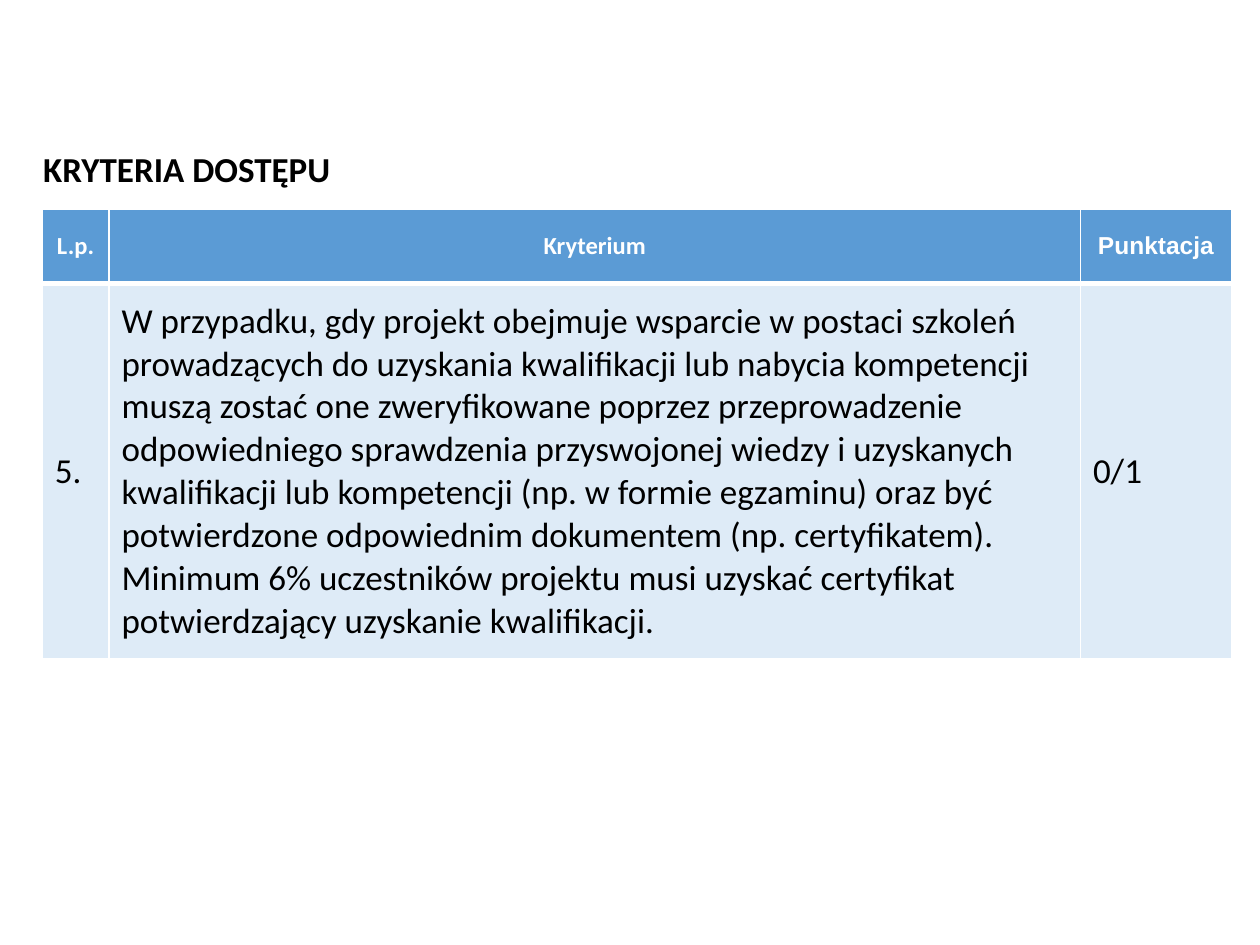
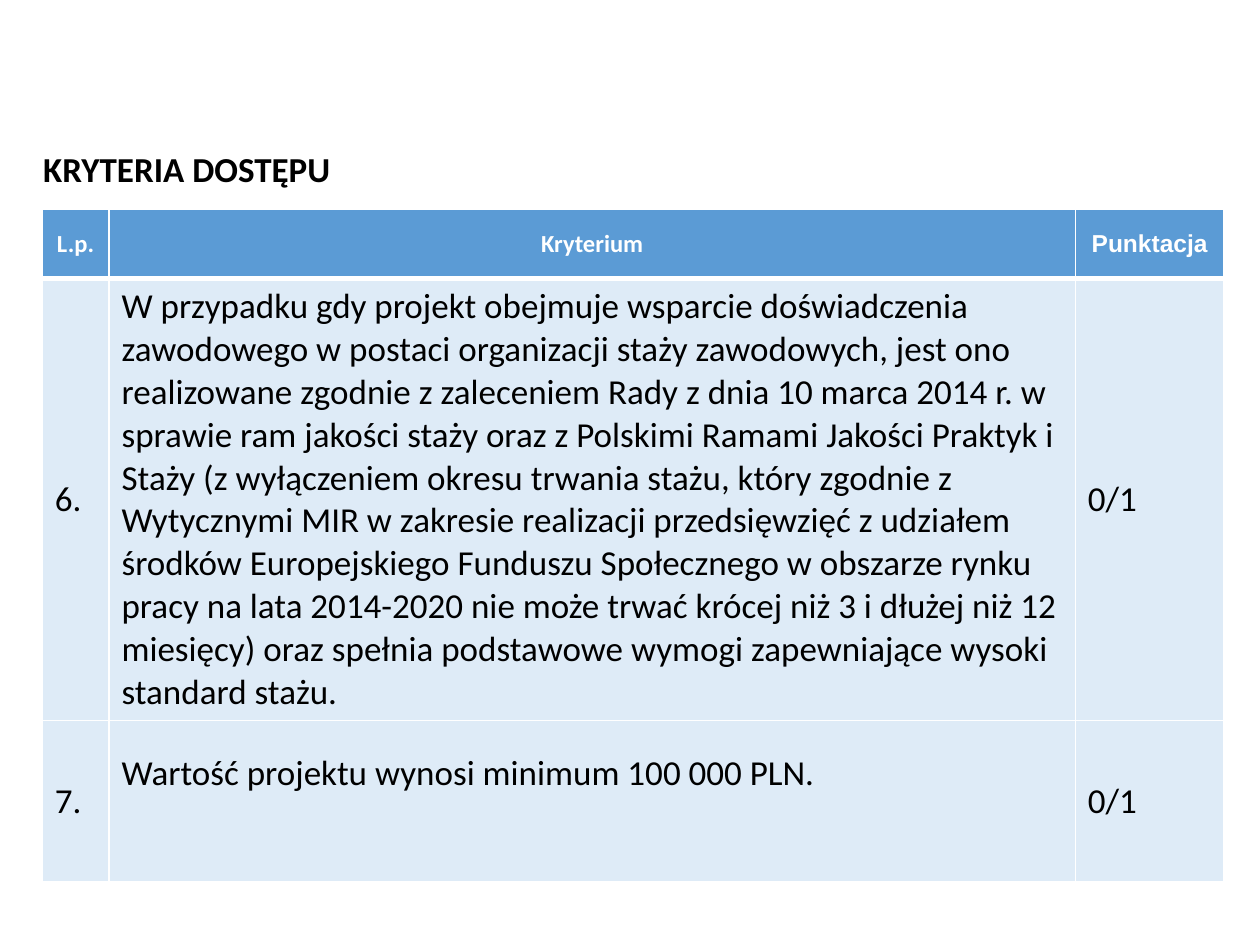
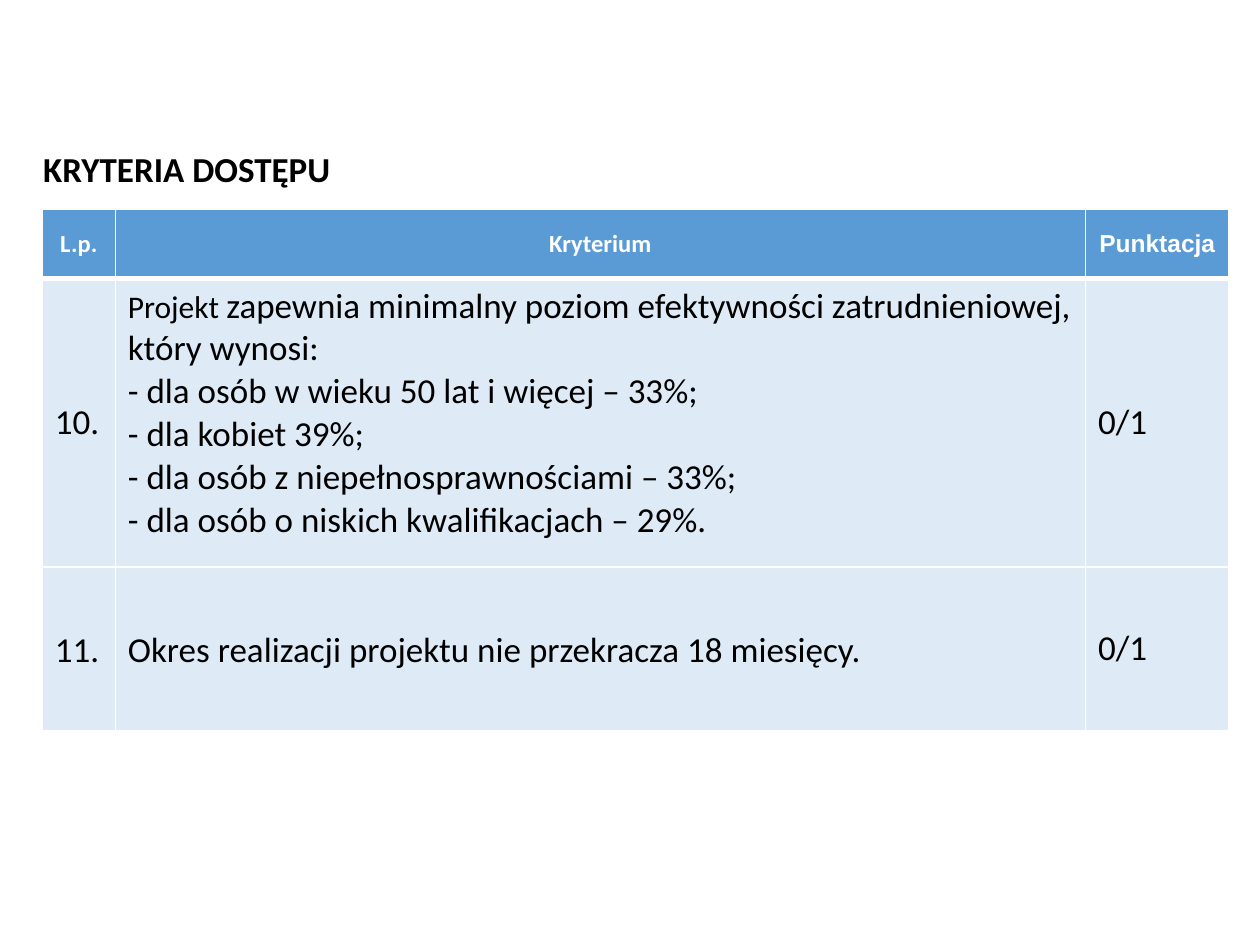
from dataclasses import dataclass

from lxml import etree
from pptx import Presentation
from pptx import util as u
from pptx.dml.color import RGBColor
from pptx.enum import text
from pptx.oxml.ns import qn

# Shared look
HUES = {"head": "5B9BD5", "body": "DEEBF7", "white": "FFFFFF", "ink": "000000"}
FONT = "Calibri"
TITLE = "KRYTERIA DOSTĘPU"
HEADS = [("L.p.", FONT), ("Kryterium", FONT), ("Punktacja", "Arial")]
SCORE = "0/1"

# Grid: 100 columns by 75 rows
COLS, ROWS = 100, 75
WIDE, HIGH = u.Inches(10), u.Inches(7.5)
LEFT, TOP = 3.35, 16.6


def gx(n: float) -> int:
    return round(WIDE * n / COLS)


def gy(n: float) -> int:
    return round(HIGH * n / ROWS)


@dataclass
class Rule:
    """One criterion: its number, its lines and the height of its row."""
    num: str
    lines: list[str]
    high: float
    lead: str = ""            # smaller opening words of the first line
    top: bool = False         # text at the top of the cell
    loose: tuple[int, ...] = ()   # columns with looser lines
    foot: float = 0.5         # bottom margin of the criterion cell


@dataclass
class Page:
    """One slide: column widths, header height, criteria."""
    cols: list[float]
    head: float
    rules: list[Rule]


PAGES = [
    Page([5.3, 77.1, 12], 5.9, [
        Rule("5.", [
            "W przypadku, gdy projekt obejmuje wsparcie w postaci szkoleń "
            "prowadzących do uzyskania kwalifikacji lub nabycia kompetencji "
            "muszą zostać one zweryfikowane poprzez przeprowadzenie "
            "odpowiedniego sprawdzenia przyswojonej wiedzy i uzyskanych "
            "kwalifikacji lub kompetencji (np. w formie egzaminu) oraz być "
            "potwierdzone odpowiednim dokumentem (np. certyfikatem). "
            "Minimum 6% uczestników projektu musi uzyskać certyfikat "
            "potwierdzający uzyskanie kwalifikacji."], 29.8),
    ]),
    Page([5.3, 76.7, 11.8], 5.5, [
        Rule("6.", [
            "W przypadku gdy projekt obejmuje wsparcie doświadczenia "
            "zawodowego w postaci organizacji staży zawodowych, jest ono "
            "realizowane zgodnie z zaleceniem Rady z dnia 10 marca 2014 r. w "
            "sprawie ram jakości staży oraz z Polskimi Ramami Jakości Praktyk "
            "i Staży (z wyłączeniem okresu trwania stażu, który zgodnie z "
            "Wytycznymi MIR w zakresie realizacji przedsięwzięć z udziałem "
            "środków Europejskiego Funduszu Społecznego w obszarze rynku "
            "pracy na lata 2014-2020 nie może trwać krócej niż 3 i dłużej niż "
            "12 miesięcy) oraz spełnia podstawowe wymogi zapewniające wysoki "
            "standard stażu."], 35.1),
        Rule("7.", ["Wartość projektu wynosi minimum 100 000 PLN."], 12.8,
             loose=(1,), foot=5.2),
    ]),
    Page([5.8, 77, 11.4], 5.5, [
        Rule("10.", [
            "zapewnia minimalny poziom efektywności zatrudnieniowej, "
            "który wynosi:",
            "- dla osób w wieku 50 lat i więcej – 33%;",
            "- dla kobiet 39%;",
            "- dla osób z niepełnosprawnościami – 33%;",
            "- dla osób o niskich kwalifikacjach – 29%."],
            22.9, lead="Projekt ", top=True),
        Rule("11.", ["Okres realizacji projektu nie przekracza 18 miesięcy."],
             13, loose=(0, 1)),
    ]),
]


def style(para, size: int, hue: str, bold: bool, face: str = FONT) -> None:
    font = para.font
    font.size, font.bold, font.name = u.Pt(size), bold, face
    font.color.rgb = RGBColor.from_string(HUES[hue])


def paint(cell, hue: str, edges: dict[str, float]) -> None:
    """Draw white cell borders, then fill the cell."""
    props = cell._tc.get_or_add_tcPr()
    for side, width in edges.items():
        line = etree.SubElement(props, qn(f"a:ln{side}"), w=str(u.Pt(width)))
        fill = etree.SubElement(line, qn("a:solidFill"))
        etree.SubElement(fill, qn("a:srgbClr"), val=HUES["white"])
    cell.fill.solid()
    cell.fill.fore_color.rgb = RGBColor.from_string(HUES[hue])
    cell.vertical_anchor = text.MSO_ANCHOR.MIDDLE


def add_head(grid) -> None:
    for cell, (word, face) in zip(grid.rows[0].cells, HEADS):
        paint(cell, "head", {"L": 1, "R": 1, "T": 1, "B": 3})
        para = cell.text_frame.paragraphs[0]
        para.text = word
        para.alignment = text.PP_ALIGN.CENTER
        style(para, 14, "white", True, face)


def add_rule(row, rule: Rule) -> None:
    row.height = gy(rule.high)
    for col, lines in enumerate([[rule.num], rule.lines, [SCORE]]):
        cell = row.cells[col]
        paint(cell, "body", {"L": 1, "R": 1, "B": 1})
        frame = cell.text_frame
        frame.text = "\n".join(lines)
        for para in frame.paragraphs:
            style(para, 20, "ink", False)
            if col in rule.loose:
                para.line_spacing, para.space_after = 1.07, u.Pt(8)
    # Details of the criterion cell
    cell = row.cells[1]
    cell.margin_bottom = gy(rule.foot)
    if rule.top:
        cell.vertical_anchor = text.MSO_ANCHOR.TOP
    if rule.lead:
        para = cell.text_frame.paragraphs[0]
        para.runs[0].text = rule.lead
        para.runs[0].font.size = u.Pt(18)
        para.add_run().text = rule.lines[0]


def add_grid(slide, page: Page) -> None:
    high = page.head + sum(rule.high for rule in page.rules)
    grid = slide.shapes.add_table(
        len(page.rules) + 1, len(page.cols),
        gx(LEFT), gy(TOP), gx(sum(page.cols)), gy(high)).table
    for col, width in zip(grid.columns, page.cols):
        col.width = gx(width)
    grid.rows[0].height = gy(page.head)
    add_head(grid)
    for num, rule in enumerate(page.rules, 1):
        add_rule(grid.rows[num], rule)


def add_title(slide) -> None:
    box = slide.shapes.add_textbox(gx(2.45), gy(11.2), gx(37), gy(4.4))
    frame = box.text_frame
    frame.word_wrap = True
    frame.auto_size = text.MSO_AUTO_SIZE.SHAPE_TO_FIT_TEXT
    frame.vertical_anchor = text.MSO_ANCHOR.MIDDLE
    para = frame.paragraphs[0]
    para.text = TITLE
    style(para, 20, "ink", True)


def main() -> None:
    deck = Presentation()
    deck.slide_width, deck.slide_height = WIDE, HIGH
    for page in PAGES:
        slide = deck.slides.add_slide(deck.slide_layouts[6])
        add_grid(slide, page)
        add_title(slide)
    deck.save("out.pptx")


if __name__ == "__main__":
    main()
